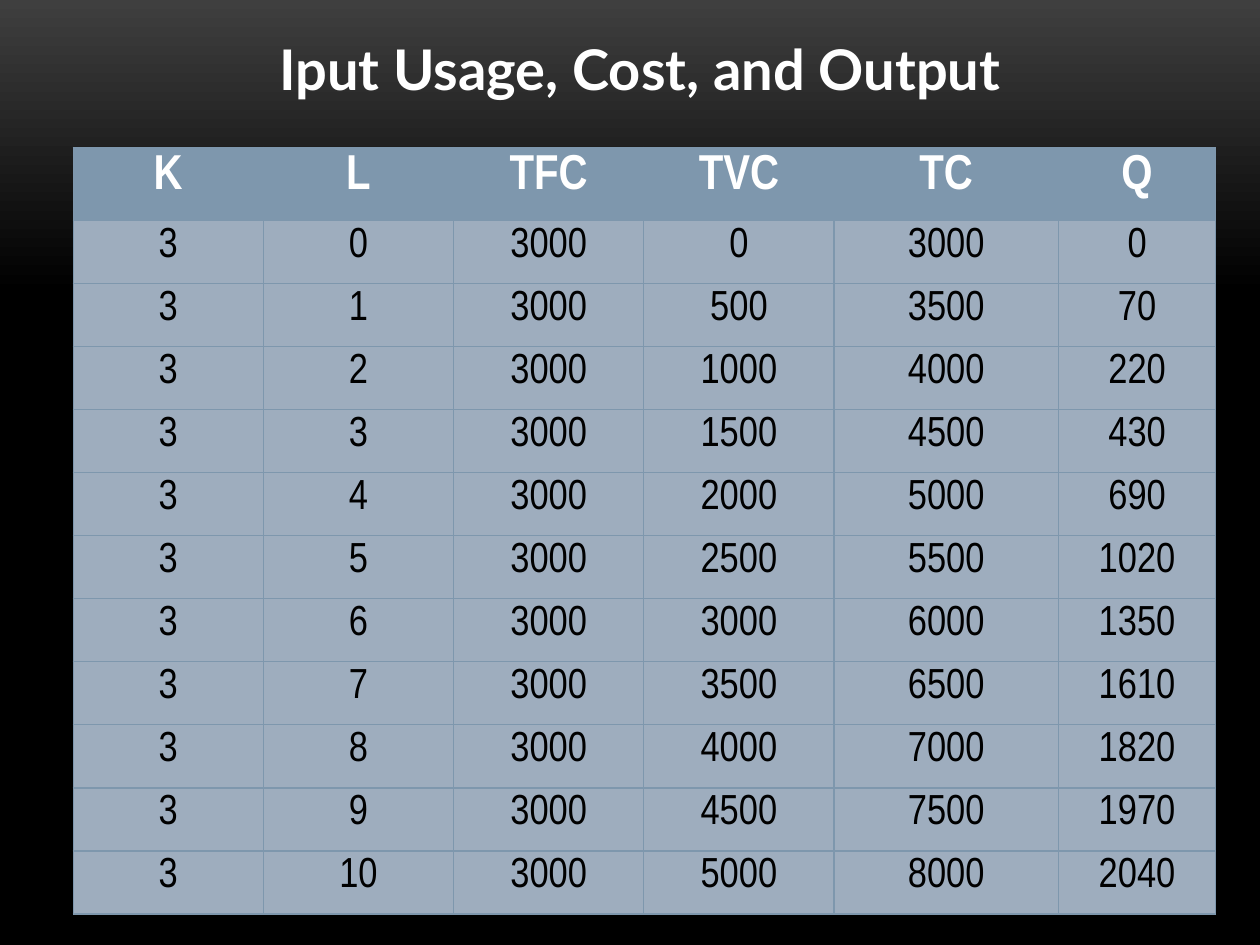
from copy import deepcopy

from lxml import etree
from pptx import Presentation
from pptx.dml.color import RGBColor
from pptx.enum.text import MSO_ANCHOR, MSO_AUTO_SIZE, PP_ALIGN
from pptx.oxml.ns import qn
from pptx.util import Inches, Pt

CENTER = PP_ALIGN.CENTER
TOP = MSO_ANCHOR.TOP
FIT_SHAPE = MSO_AUTO_SIZE.SHAPE_TO_FIT_TEXT
COLORS = {"glow": "3F3F3F", "black": "000000", "white": "FFFFFF",
          "header": "7E97AD", "body": "9EADBE"}
TITLE_FONT = {"name": "Lato", "size": Pt(32), "bold": True}
HEADER_FONT = {"name": "Arial Narrow", "size": Pt(28), "bold": True}
BODY_FONT = {"name": "Arial Narrow", "size": Pt(24), "bold": False}


def format_text(paragraph, font_format, color):
    paragraph.alignment = CENTER
    for attribute, value in font_format.items():
        setattr(paragraph.font, attribute, value)
    paragraph.font.color.rgb = RGBColor.from_string(COLORS[color])


def add_borders(cell, color):
    properties = cell._tc.get_or_add_tcPr()
    for side in ("a:lnL", "a:lnR", "a:lnT", "a:lnB"):
        line = etree.SubElement(properties, qn(side), w=str(Pt(0.75)))
        fill = etree.SubElement(line, qn("a:solidFill"))
        etree.SubElement(fill, qn("a:srgbClr"), val=COLORS[color])


prs = Presentation()
prs.slide_width = Inches(10)
prs.slide_height = Inches(7.5)
slide = prs.slides.add_slide(prs.slide_layouts[5])

backdrop = slide.background.fill
backdrop.gradient()
backdrop.gradient_angle = 270
for stop, (position, color) in zip(backdrop.gradient_stops, ((0, "glow"), (0.31, "black"))):
    stop.position = position
    stop.color.rgb = RGBColor.from_string(COLORS[color])
stop_list = next(slide.element.iter(qn("a:gsLst")))
last_stop = deepcopy(stop_list[-1])
last_stop.set("pos", "100000")
stop_list.append(last_stop)

title = slide.shapes.title
title.left, title.top = Inches(0.58), Inches(0.22)
title.width, title.height = Inches(9), Inches(0.64)
title.text_frame.text = "Iput Usage, Cost, and Output"
title.text_frame.vertical_anchor = TOP
title.text_frame.auto_size = FIT_SHAPE
format_text(title.text_frame.paragraphs[0], TITLE_FONT, "white")

capital, fixed_cost, labor_cost = 3, 3000, 500
outputs = [0, 70, 220, 430, 690, 1020, 1350, 1610, 1820, 1970, 2040]
cost_rows = [["K", "L", "TFC", "TVC", "TC", "Q"]]
for labor, output in enumerate(outputs):
    variable_cost = labor * labor_cost
    cost_rows.append([capital, labor, fixed_cost, variable_cost,
                      fixed_cost + variable_cost, output])

column_widths = [1.51, 1.51, 1.51, 1.51, 1.78, 1.25]
row_heights = [0.58] + [0.5] * len(outputs)
cost_table = slide.shapes.add_table(
    len(cost_rows), len(column_widths), Inches(0.58), Inches(1.17),
    Inches(sum(column_widths)), Inches(sum(row_heights))).table
for column, width in zip(cost_table.columns, column_widths):
    column.width = Inches(width)

for row_index, (values, height) in enumerate(zip(cost_rows, row_heights)):
    cost_table.rows[row_index].height = Inches(height)
    if row_index == 0:
        font_format, text_color, fill_color = HEADER_FONT, "white", "header"
    else:
        font_format, text_color, fill_color = BODY_FONT, "black", "body"
    for column_index, value in enumerate(values):
        cell = cost_table.cell(row_index, column_index)
        cell.text = str(value)
        format_text(cell.text_frame.paragraphs[0], font_format, text_color)
        add_borders(cell, "header")
        cell.fill.solid()
        cell.fill.fore_color.rgb = RGBColor.from_string(COLORS[fill_color])

prs.save("out.pptx")
